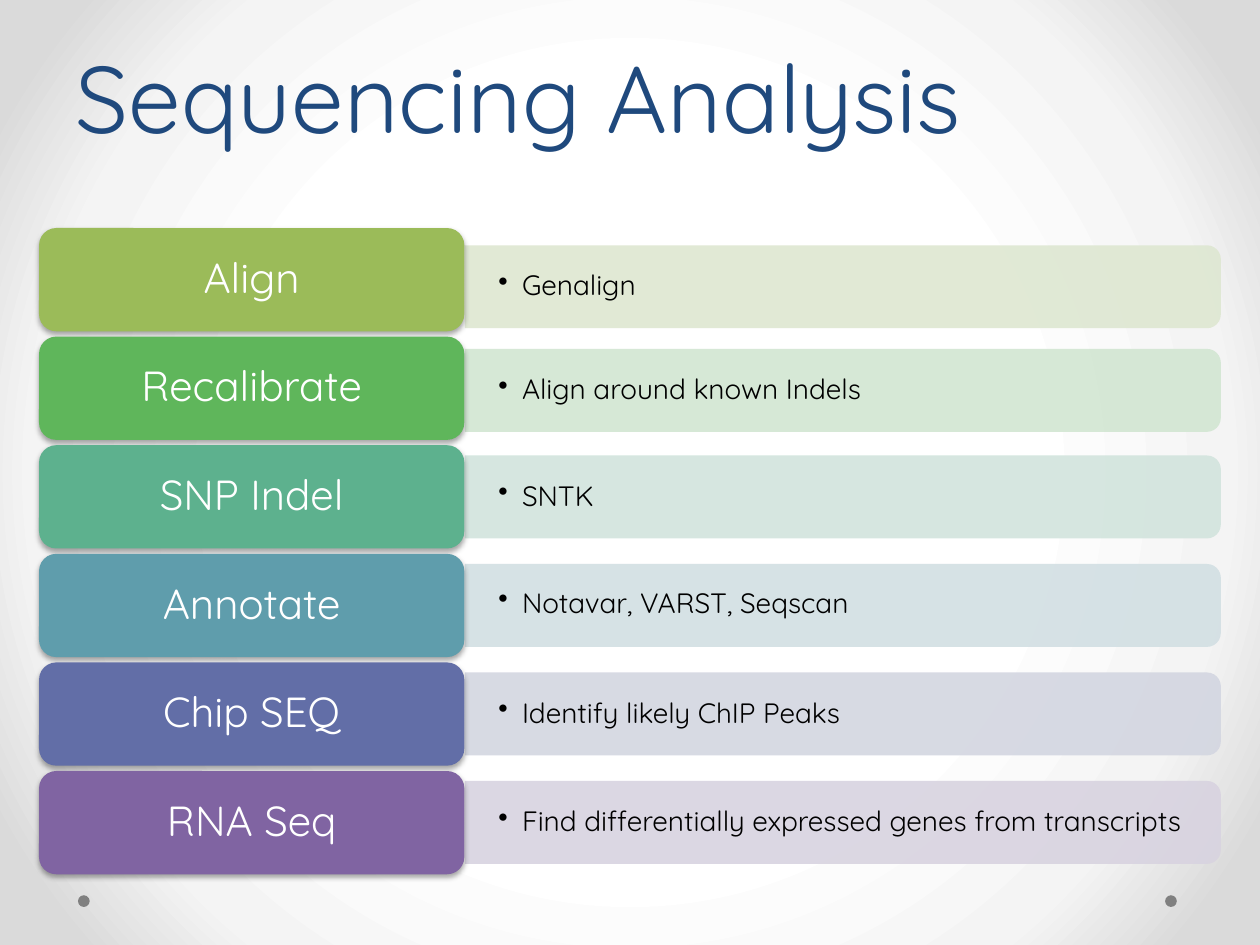
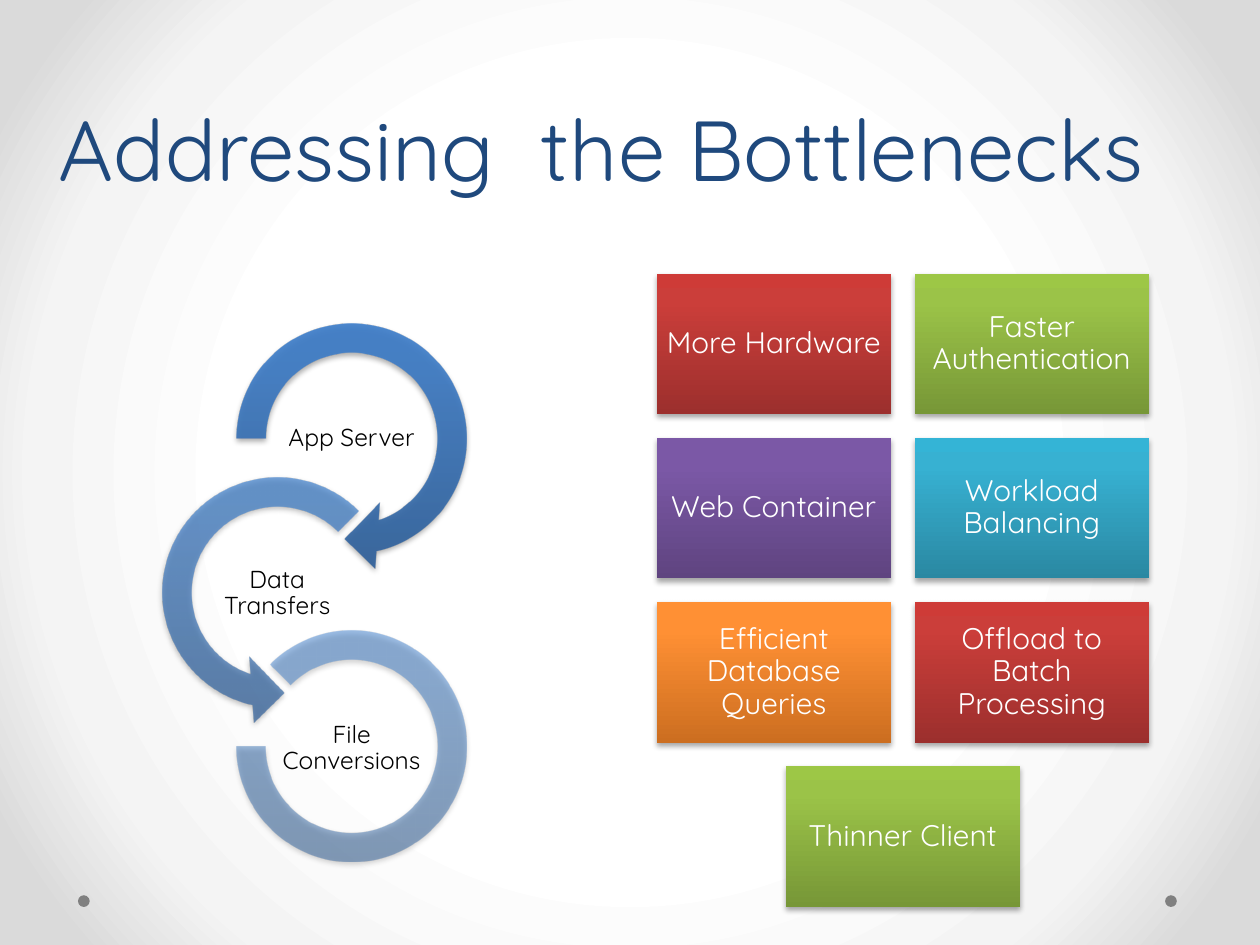
from dataclasses import dataclass

from lxml import etree
from pptx import Presentation
from pptx.dml.color import RGBColor
from pptx.enum.shapes import MSO_SHAPE as Preset
from pptx.enum.text import MSO_ANCHOR as Anchor, PP_ALIGN as Align
from pptx.oxml.ns import qn
from pptx.util import Pt

# Shared look
FONT = "Quicksand"
NAVY = RGBColor(0x1F, 0x49, 0x7D)
BLACK = RGBColor(0x00, 0x00, 0x00)
WHITE = RGBColor(0xFF, 0xFF, 0xFF)
SMOKE = RGBColor(0xF4, 0xF4, 0xF4)
SILVER = RGBColor(0xDA, 0xDA, 0xDA)
GRAY = RGBColor(0x80, 0x80, 0x80)

BACKDROP = ((50, WHITE), (76, SMOKE), (92, SILVER))


def glossy(dark: str, middle: str, light: str) -> tuple:
    """Gradient stops of a tile, from its bottom edge to its top edge."""
    return tuple(zip((0, 80, 100), map(RGBColor.from_string, (dark, middle, light))))


BLUE = glossy("2F5F99", "3D7CC7", "3A7CCB")
RED = glossy("9C2F2D", "CB3E3A", "CE3B37")
GREEN = glossy("779737", "9BC348", "9DC746")
PURPLE = glossy("5F4480", "7B58A6", "7C57A8")
AQUA = glossy("2A88A2", "37B1D2", "34B4D6")
ORANGE = glossy("CC6E20", "FF9034", "FF9136")


@dataclass(frozen=True)
class Box:
    left: float
    top: float
    width: float
    height: float

    def lengths(self) -> tuple:
        return Pt(self.left), Pt(self.top), Pt(self.width), Pt(self.height)


@dataclass(frozen=True)
class Step:
    name: str
    detail: str
    color: RGBColor
    tint: RGBColor
    bar_middle: float
    line_spacing: float = 0.9


@dataclass(frozen=True)
class Ring:
    label: str
    preset: Preset
    box: Box
    adjustments: tuple
    opacity: int
    label_left: float
    label_top: float


@dataclass(frozen=True)
class Remedy:
    text: str
    stops: tuple


STEPS = (
    Step("Align", "Genalign", RGBColor(0x9B, 0xBB, 0x59),
         RGBColor(0xDE, 0xE7, 0xD1), 163.9),
    Step("Recalibrate", "Align around known Indels", RGBColor(0x5F, 0xB6, 0x5B),
         RGBColor(0xD2, 0xE6, 0xD2), 223.1),
    Step("SNP Indel", "SNTK", RGBColor(0x5D, 0xB1, 0x8E),
         RGBColor(0xD2, 0xE4, 0xDD), 284),
    Step("Annotate", "Notavar, VARST, Seqscan", RGBColor(0x5F, 0x9D, 0xAC),
         RGBColor(0xD2, 0xDF, 0xE3), 346, 0.8),
    Step("Chip SEQ", "Identify likely ChIP Peaks", RGBColor(0x62, 0x6E, 0xA7),
         RGBColor(0xD3, 0xD6, 0xE1), 408),
    Step("RNA Seq", "Find differentially expressed genes from transcripts",
         RGBColor(0x80, 0x64, 0xA2), RGBColor(0xD8, 0xD3, 0xE0), 470),
)

RINGS = (
    Ring("App Server", Preset.CIRCULAR_ARROW, Box(124.6, 174.2, 152.6, 152.6),
         (0.11, 11.42, 45, 108, 0.125), 90, 158.4, 229.5),
    Ring("Data Transfers", Preset.LEFT_CIRCULAR_ARROW, Box(82.1, 262.1, 152.6, 152.6),
         (0.11, 11.42, 63, 189, 0.125), 70, 115.9, 318),
    Ring("File Conversions", Preset.BLOCK_ARC, Box(135.4, 360.6, 131, 131.5),
         (135, 108, 0.127), 50, 158.4, 406.6),
)

REMEDIES = (
    Remedy("More Hardware", RED), Remedy("Faster Authentication", GREEN),
    Remedy("Web Container", PURPLE), Remedy("Workload Balancing", AQUA),
    Remedy("Efficient Database Queries", ORANGE),
    Remedy("Offload to Batch Processing", RED), Remedy("Thinner Client", GREEN),
)


def add_child(parent, tag: str, **attributes):
    return etree.SubElement(parent, qn(tag),
                            {name: str(value) for name, value in attributes.items()})


def set_opacity(color_element, percent: int) -> None:
    add_child(color_element, "a:alpha", val=percent * 1000)


def fill_gradient(owner, fill, stops: tuple, opacity: int = 100, circular: bool = False) -> None:
    """Fill an object with stops that rise upwards or spread from the middle."""
    fill.gradient()
    gradient = owner.element.xpath(".//a:gradFill")[0]
    for child in list(gradient):
        gradient.remove(child)
    stop_list = add_child(gradient, "a:gsLst")
    for position, color in stops:
        stop = add_child(stop_list, "a:gs", pos=position * 1000)
        color_element = add_child(stop, "a:srgbClr", val=color)
        if opacity < 100:
            set_opacity(color_element, opacity)
    if circular:
        spread = add_child(gradient, "a:path", path="circle")
        add_child(spread, "a:fillToRect", l=50000, t=50000, r=50000, b=50000)
    else:
        add_child(gradient, "a:lin", ang=270 * 60000, scaled=0)


def add_plain_shape(slide, preset: Preset, box: Box, color: RGBColor = None):
    shape = slide.shapes.add_shape(preset, *box.lengths())
    shape.shadow.inherit = False
    shape.line.fill.background()
    if color is not None:
        shape.fill.solid()
        shape.fill.fore_color.rgb = color
    return shape


def add_shadow(shape) -> None:
    effects = shape.element.spPr.find(qn("a:effectLst"))
    shadow = add_child(effects, "a:outerShdw", blurRad=Pt(3.15), dist=Pt(1.8),
                       dir=90 * 60000, rotWithShape=0)
    set_opacity(add_child(shadow, "a:srgbClr", val=BLACK), 35)


def write(shape, text: str, size: float, color: RGBColor, spacing=0.9,
          align: Align = Align.CENTER, anchor: Anchor = Anchor.MIDDLE,
          inset: tuple = (7.2, 3.6)):
    """Put one paragraph into a shape; inset is (horizontal, vertical)."""
    frame = shape.text_frame
    frame.word_wrap = True
    frame.vertical_anchor = anchor
    frame.margin_left = frame.margin_right = Pt(inset[0])
    frame.margin_top = frame.margin_bottom = Pt(inset[1])
    paragraph = frame.paragraphs[0]
    paragraph.text = text
    paragraph.alignment = align
    paragraph.line_spacing = spacing
    paragraph.font.name = FONT
    paragraph.font.size = Pt(size)
    paragraph.font.color.rgb = color
    return paragraph


def add_bullet(paragraph, indent: float) -> None:
    properties = paragraph._p.get_or_add_pPr()
    properties.set("marL", str(Pt(indent)))
    properties.set("indent", str(-Pt(indent)))
    bullet = etree.Element(qn("a:buChar"), char="•")
    properties.insert_element_before(bullet, "a:tabLst", "a:defRPr", "a:extLst")


def add_base_slide(presentation, title: str, title_box: Box, size: float):
    slide = presentation.slides.add_slide(presentation.slide_layouts[6])
    for left in (44.6, 665.8):
        add_plain_shape(slide, Preset.OVAL, Box(left, 511.6, 6.7, 6.7), GRAY)
    title_shape = slide.shapes.add_textbox(*title_box.lengths())
    write(title_shape, title, size, NAVY, Pt(58), Align.LEFT, Anchor.BOTTOM)
    return slide


def add_step(slide, step: Step, button_top: float) -> None:
    # The bar is an upright tab turned to the right
    bar_left, bar_length, bar_height = 265.6, 432, 47.4
    bar = add_plain_shape(slide, Preset.ROUND_2_SAME_RECTANGLE,
                          Box(bar_left + (bar_length - bar_height) / 2,
                              step.bar_middle - bar_length / 2,
                              bar_height, bar_length), step.tint)
    bar.rotation = 90
    set_opacity(bar.element.spPr.find(qn("a:solidFill"))[0], 90)

    detail_box = Box(bar_left, step.bar_middle - 21.4, 430, 42.8)
    detail = slide.shapes.add_textbox(*detail_box.lengths())
    add_bullet(write(detail, step.detail, 16, BLACK, step.line_spacing,
                     Align.LEFT, inset=(19.2, 9.6)), 13.5)

    button = add_plain_shape(slide, Preset.ROUNDED_RECTANGLE,
                             Box(22.3, button_top, 243, 59), step.color)
    add_shadow(button)
    write(button, step.name, 24, WHITE)


def add_ring(slide, ring: Ring) -> None:
    arc = add_plain_shape(slide, ring.preset, ring.box)
    for index, value in enumerate(ring.adjustments):
        arc.adjustments[index] = value
    fill_gradient(arc, arc.fill, BLUE, ring.opacity)
    add_shadow(arc)
    label_box = Box(ring.label_left, ring.label_top, 85, 42.5)
    label = slide.shapes.add_textbox(*label_box.lengths())
    write(label, ring.label, 14, BLACK, inset=(0.7, 0.7))


def add_remedies(slide) -> None:
    """Rows of two tiles; an incomplete last row is centred."""
    columns, left, top, width, height, gap = 2, 375.2, 156.4, 134, 80.4, 13.4
    for start in range(0, len(REMEDIES), columns):
        row = REMEDIES[start:start + columns]
        row_left = left + (columns - len(row)) * (width + gap) / 2
        row_top = top + start // columns * (height + gap)
        for column, remedy in enumerate(row):
            tile = add_plain_shape(slide, Preset.RECTANGLE,
                                   Box(row_left + column * (width + gap), row_top,
                                       width, height))
            fill_gradient(tile, tile.fill, remedy.stops)
            add_shadow(tile)
            write(tile, remedy.text, 17, WHITE, inset=(4.8, 4.8))


def main() -> None:
    presentation = Presentation()
    presentation.slide_width, presentation.slide_height = Pt(720), Pt(540)
    master = presentation.slide_master
    fill_gradient(master, master.background.fill, BACKDROP, circular=True)

    # Slide 1: analysis steps
    slide = add_base_slide(presentation, "Sequencing Analysis", Box(36, 0, 648, 90.7), 54)
    for index, step in enumerate(STEPS):
        add_step(slide, step, 130.3 + index * 62.06)

    # Slide 2: bottlenecks and remedies
    slide = add_base_slide(presentation, "Addressing  the Bottlenecks",
                           Box(26.6, 46.1, 675.4, 70.6), 48.6)
    for ring in RINGS:
        add_ring(slide, ring)
    add_remedies(slide)

    presentation.save("out.pptx")


if __name__ == "__main__":
    main()
